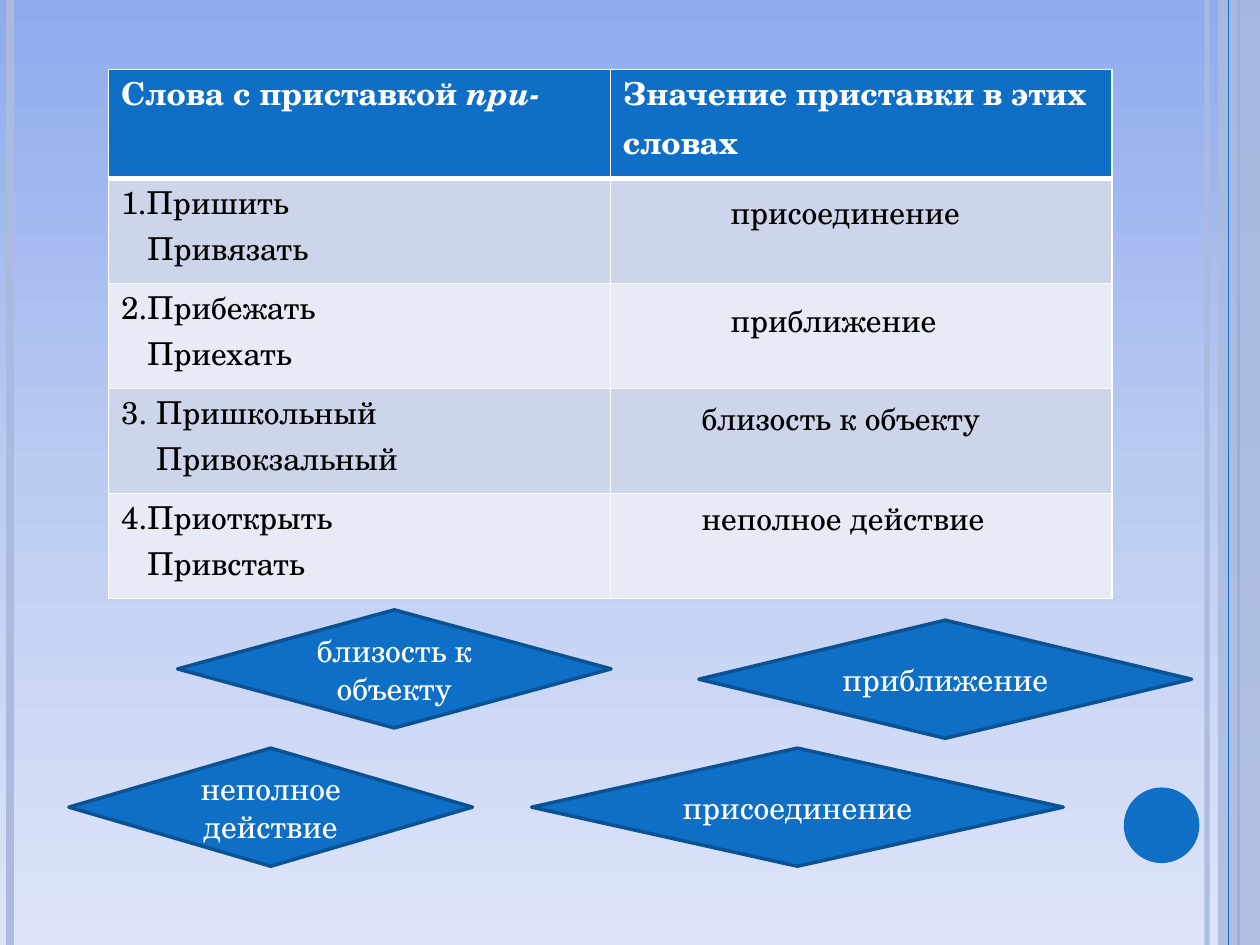
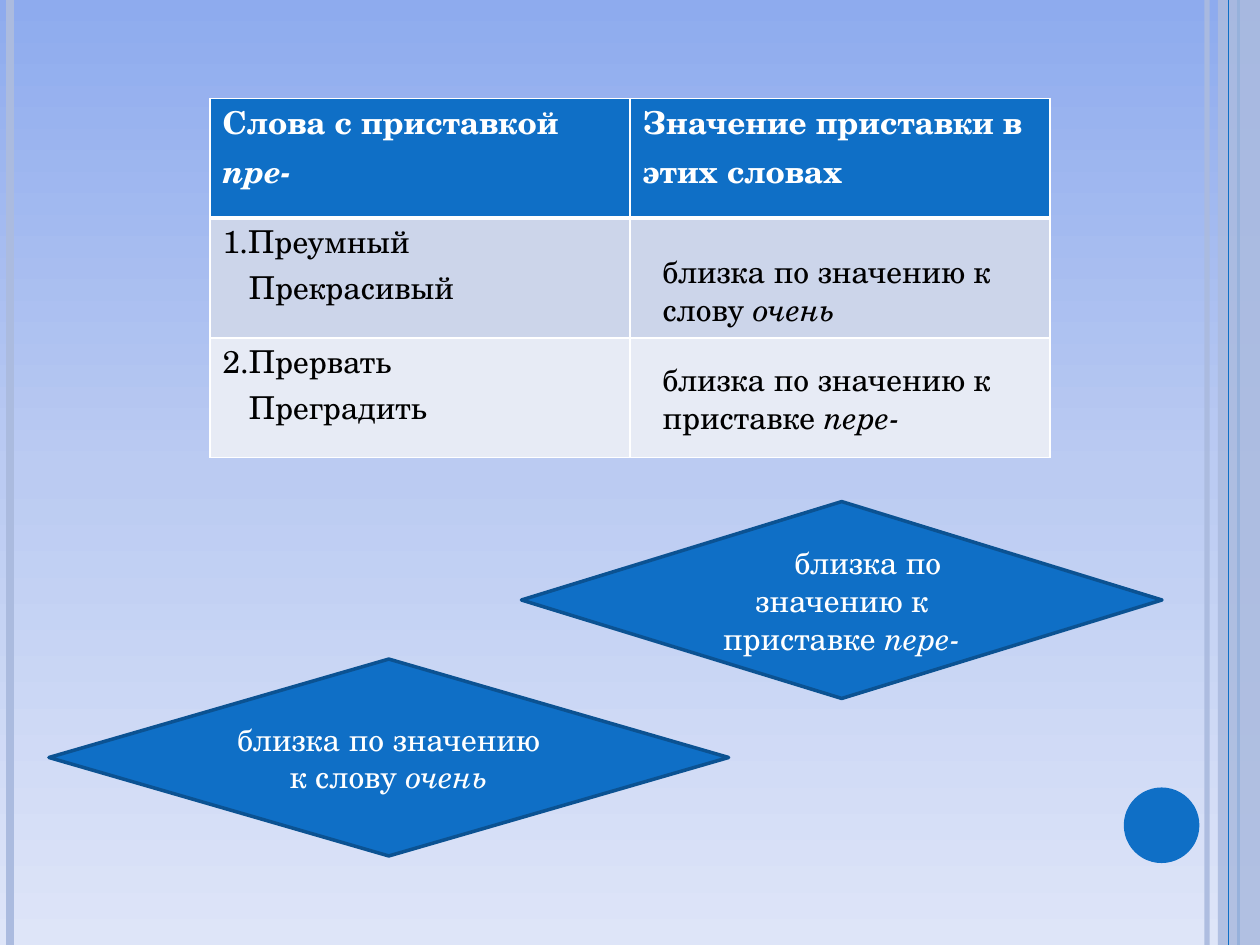
from dataclasses import dataclass

from lxml.etree import SubElement
from copy import deepcopy
from pptx import Presentation
from pptx.dml.color import RGBColor
from pptx.enum.shapes import MSO_CONNECTOR, MSO_SHAPE
from pptx.enum.text import MSO_ANCHOR, PP_ALIGN
from pptx.oxml.ns import qn
from pptx.util import Pt


@dataclass(frozen=True)
class Theme:
    font: str = "TeX Gyre Schola"
    size: int = 18
    blue: str = "0F6FC6"
    edge: str = "0B5292"
    pale: str = "ABBBDF"
    white: str = "FFFFFF"
    black: str = "000000"
    bands: tuple = ("CCD5EA", "E7EBF5")
    sky: tuple = ("8EABEE", "BBCBF2", "DEE5F8")
    head_line: float = 27.6
    body_line: float = 26.4


THEME = Theme()
WIDTH, HEIGHT = 720, 540

# Text is a pair: upright part, italic part.
NEAR = ("близость к объекту", "")
CLOSER = ("приближение", "")
PARTLY = ("неполное действие", "")
JOINED = ("присоединение", "")
VERY = ("близка по значению к слову ", "очень")
ACROSS = ("близка по значению к приставке ", "пере-")
MEANING = ("Значение приставки в этих словах", "")

# Words: first line, second line, indent of the second line.
# Diamonds: text, box, first-line indent. Answers: text, box, wrap.
SLIDES = [
    {
        "heads": [("Слова с приставкой ", "при-"), MEANING],
        "words": [
            ("1.Пришить", "Привязать", 15),
            ("2.Прибежать", "Приехать", 15),
            ("3. Пришкольный", "Привокзальный", 20),
            ("4.Приоткрыть", "Привстать", 15),
        ],
        "table": (62, 39.6, 573.6),
        "rows": (62.4, 60),
        "diamonds": [
            (NEAR, (101.5, 348.5, 247.7, 67.5), 0),
            (CLOSER, (399.4, 354.4, 281.5, 67.5), 0),
            (PARTLY, (39.4, 427.5, 230.6, 67.5), 0),
            (JOINED, (303.8, 427.5, 303.8, 67.5), 0),
        ],
        "answers": [
            (JOINED, (410.4, 106.6, 147.6, 29), False),
            (CLOSER, (410.4, 168.5, 134.6, 29), False),
            (NEAR, (393.8, 224.6, 178.6, 29), False),
            (PARTLY, (393.8, 281.5, 178.6, 29), False),
        ],
    },
    {
        "heads": [("Слова с приставкой ", "пре-"), MEANING],
        "words": [
            ("1.Преумный", "Прекрасивый", 15),
            ("2.Прервать", "Преградить", 15),
        ],
        "table": (120, 56.2, 480),
        "rows": (68.4, 68.4),
        "diamonds": [
            (VERY, (28, 376.6, 388.4, 112.5), 0),
            (ACROSS, (298, 286.6, 366, 112.5), 30),
        ],
        "answers": [
            (VERY, (371.5, 140.4, 219.6, 51), True),
            (ACROSS, (371.5, 202.3, 219.6, 51), True),
        ],
    },
]

# Vertical rules: x, line width, colour, opacity in percent.
RULES = [
    (689.8, 3, THEME.pale, 93),
    (5.8, 4.5, THEME.pale, 100),
    (707.8, 1.5, THEME.blue, 100),
]
THIN = (702, 0.75, THEME.blue, 100)
BAND = (696, 0, 24, HEIGHT)
DOT = (642.2, 450, 43.2, 43.2)


def rgb(code):
    return RGBColor.from_string(code)


def pts(box):
    return [Pt(n) for n in box]


def fade(part, level):
    """Set the opacity, in percent, of the first colour in a shape."""
    tint = part._element.spPr.find(".//" + qn("a:srgbClr"))
    SubElement(tint, qn("a:alpha")).set("val", str(level * 1000))


def write(para, text, color, bold=False):
    for part, slant in zip(text, (False, True)):
        if part:
            run = para.add_run()
            run.text = part
            font = run.font
            font.name, font.size = THEME.font, Pt(THEME.size)
            font.bold, font.italic = bold, slant
            font.color.rgb = rgb(color)


def rule(slide, x, width, color, level):
    line = slide.shapes.add_connector(
        MSO_CONNECTOR.STRAIGHT, Pt(x), 0, Pt(x), Pt(HEIGHT))
    line.line.width = Pt(width)
    line.line.color.rgb = rgb(color)
    SubElement(line._element.spPr, qn("a:effectLst"))
    if level < 100:
        fade(line, level)


def shape(slide, kind, box, fill, edge=None):
    item = slide.shapes.add_shape(kind, *pts(box))
    item.shadow.inherit = False
    item.fill.solid()
    item.fill.fore_color.rgb = rgb(fill)
    if edge:
        item.line.color.rgb = rgb(edge)
        item.line.width = Pt(2)
    else:
        item.line.fill.background()
    return item


def paint(master):
    """Give every slide the three-stop sky."""
    fill = master.background.fill
    fill.gradient()
    fill.gradient_angle = 270
    stops = master.element.find(".//" + qn("a:gsLst"))
    stops.insert(1, deepcopy(stops[0]))
    for stop, color, place in zip(fill.gradient_stops, THEME.sky, (0, 0.5, 1)):
        stop.color.rgb = rgb(color)
        stop.position = place


def frame(slide):
    """Draw the side rules, band and dot that the slides share."""
    for item in RULES:
        rule(slide, *item)
    fade(shape(slide, MSO_SHAPE.RECTANGLE, BAND, THEME.pale), 87)
    rule(slide, *THIN)
    shape(slide, MSO_SHAPE.OVAL, DOT, THEME.blue)


def style(cell, row):
    """Set borders, fill and margins of a cell by its row."""
    props = cell._tc.get_or_add_tcPr()
    thick = {"B": 3} if row == 0 else {"T": 3} if row == 1 else {}
    for side in "LRTB":
        line = SubElement(props, qn("a:ln" + side))
        line.set("w", str(Pt(thick.get(side, 1))))
        tint = SubElement(SubElement(line, qn("a:solidFill")), qn("a:srgbClr"))
        tint.set("val", THEME.white)
    cell.fill.solid()
    cell.fill.fore_color.rgb = rgb(THEME.bands[(row - 1) % 2] if row else THEME.blue)
    cell.margin_top, cell.margin_bottom = 0, Pt(7.2)


def grid(slide, data):
    left, top, width = data["table"]
    first, rest = data["rows"]
    count = len(data["words"])
    table = slide.shapes.add_table(
        count + 1, 2, *pts((left, top, width, first + count * rest))).table
    for col in table.columns:
        col.width = Pt(width / 2)
    for row, line in enumerate(table.rows):
        line.height = Pt(rest if row else first)
        for cell in line.cells:
            style(cell, row)
    for col, head in enumerate(data["heads"]):
        para = table.cell(0, col).text_frame.paragraphs[0]
        para.line_spacing = Pt(THEME.head_line)
        write(para, head, THEME.white, True)
    for row, (one, two, indent) in enumerate(data["words"], 1):
        text = table.cell(row, 0).text_frame
        last = text.add_paragraph()
        last._p.get_or_add_pPr().set("marL", str(Pt(indent)))
        for para, word in zip(text.paragraphs, (one, two)):
            para.line_spacing = Pt(THEME.body_line)
            write(para, (word, ""), THEME.black)


def diamond(slide, text, box, indent):
    item = shape(slide, MSO_SHAPE.FLOWCHART_DECISION, box, THEME.blue, THEME.edge)
    item.text_frame.vertical_anchor = MSO_ANCHOR.MIDDLE
    item.text_frame.word_wrap = True
    para = item.text_frame.paragraphs[0]
    para.alignment = PP_ALIGN.CENTER
    if indent:
        para._p.get_or_add_pPr().set("indent", str(Pt(indent)))
    write(para, text, THEME.white)


def answer(slide, text, box, wrap):
    frame = slide.shapes.add_textbox(*pts(box)).text_frame
    frame.word_wrap = wrap
    write(frame.paragraphs[0], text, THEME.black)


def main():
    deck = Presentation()
    deck.slide_width, deck.slide_height = Pt(WIDTH), Pt(HEIGHT)
    paint(deck.slide_master)
    for data in SLIDES:
        slide = deck.slides.add_slide(deck.slide_layouts[6])
        frame(slide)
        grid(slide, data)
        for item in data["diamonds"]:
            diamond(slide, *item)
        for item in data["answers"]:
            answer(slide, *item)
    deck.save("out.pptx")


if __name__ == "__main__":
    main()
